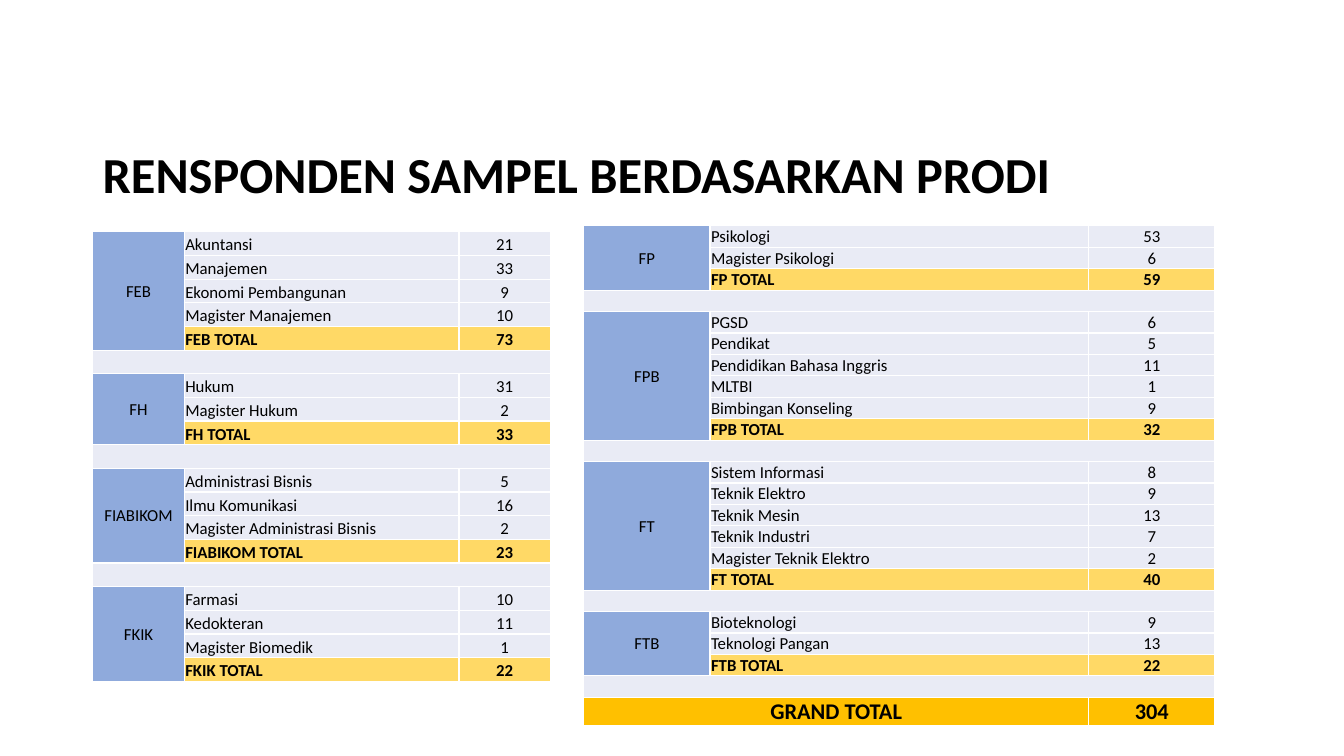
from lxml import etree
from pptx import Presentation, util as u
from pptx.dml.color import RGBColor
from pptx.enum import text
from pptx.oxml import ns

COLORS = {"faculty": "8FAADC", "program": "E9EBF5", "total": "FFD966",
          "grand": "FFC000", "ink": "000000", "border": "FFFFFF"}
MIDDLE, BOTTOM = text.MSO_ANCHOR.MIDDLE, text.MSO_ANCHOR.BOTTOM
LEFT, CENTER = text.PP_ALIGN.LEFT, text.PP_ALIGN.CENTER

LEFT_FACULTIES = [
    ("FEB", [("Akuntansi", 21), ("Manajemen", 33), ("Ekonomi Pembangunan", 9),
             ("Magister Manajemen", 10)], 73),
    ("FH", [("Hukum", 31), ("Magister Hukum", 2)], 33),
    ("FIABIKOM", [("Administrasi Bisnis", 5), ("Ilmu Komunikasi", 16),
                  ("Magister Administrasi Bisnis", 2)], 23),
    ("FKIK", [("Farmasi", 10), ("Kedokteran", 11), ("Magister Biomedik", 1)], 22),
]
RIGHT_FACULTIES = [
    ("FP", [("Psikologi", 53), ("Magister Psikologi", 6)], 59),
    ("FPB", [("PGSD", 6), ("Pendikat", 5), ("Pendidikan Bahasa Inggris", 11),
             ("MLTBI", 1), ("Bimbingan Konseling", 9)], 32),
    ("FT", [("Sistem Informasi", 8), ("Teknik Elektro", 9), ("Teknik Mesin", 13),
            ("Teknik Industri", 7), ("Magister Teknik Elektro", 2)], 40),
    ("FTB", [("Bioteknologi", 9), ("Teknologi Pangan", 13)], 22),
]


def apply(target, formats):
    """Set each named format value on the target."""
    for name, value in formats.items():
        setattr(target, name, value)


def write(paragraph, words, size, bold):
    """Add one run of Calibri in the ink colour."""
    run = paragraph.add_run()
    run.text = words
    apply(run.font, {"name": "Calibri", "size": u.Pt(size), "bold": bold})
    run.font.color.rgb = RGBColor.from_string(COLORS["ink"])


def prepare_cell(cell):
    """Give a cell thin insets, white borders, the program fill and a small empty line."""
    apply(cell, {"margin_left": u.Inches(0.01), "margin_right": u.Inches(0.01),
                 "margin_top": u.Inches(0.01), "margin_bottom": 0})
    properties = cell._tc.get_or_add_tcPr()
    for side in ("lnL", "lnR", "lnT", "lnB"):
        line = etree.SubElement(properties, ns.qn(f"a:{side}"), w=str(u.Pt(1)))
        fill = etree.SubElement(line, ns.qn("a:solidFill"))
        etree.SubElement(fill, ns.qn("a:srgbClr"), val=COLORS["border"])
    paint(cell, "program")
    paragraph = cell.text_frame.paragraphs[0]
    etree.SubElement(paragraph._p, ns.qn("a:endParaRPr"), sz="1200")


def paint(cell, role):
    """Fill a cell with the colour of its role."""
    cell.fill.solid()
    cell.fill.fore_color.rgb = RGBColor.from_string(COLORS[role])


def fill_cell(cell, words, role, align=CENTER, anchor=BOTTOM, size=12, bold=False):
    """Colour a cell and write its words."""
    paint(cell, role)
    cell.vertical_anchor = anchor
    paragraph = cell.text_frame.paragraphs[0]
    paragraph.alignment = align
    write(paragraph, words, size, bold)


def add_title(slide, box, words):
    """Place the bold slide title in its box."""
    frame = slide.shapes.add_textbox(*map(u.Inches, box)).text_frame
    apply(frame, {"word_wrap": True, "vertical_anchor": MIDDLE})
    frame.paragraphs[0].line_spacing = 0.9
    write(frame.paragraphs[0], words, 36, True)


def add_faculties(slide, box, faculties, columns, grand=None):
    """Fill the box with faculty blocks, a gap row between them and an optional grand total."""
    grand_height = 0.27 if grand else 0
    row_count = sum(len(programs) + 2 for _, programs, _ in faculties) - 1
    row_count += 2 if grand else 0
    table = slide.shapes.add_table(row_count, 3, *map(u.Inches, box)).table
    apply(table, {"first_row": False, "horz_banding": False})
    for column, share in zip(table.columns, columns):
        column.width = u.Inches(box[2] * share)
    regular_rows = row_count - bool(grand)
    for row in table.rows:
        row.height = u.Inches((box[3] - grand_height) / regular_rows)
    for cell in table.iter_cells():
        prepare_cell(cell)

    top = 0
    for faculty, programs, total in faculties:
        last = top + len(programs)
        table.cell(top, 0).merge(table.cell(last, 0))
        fill_cell(table.cell(top, 0), faculty, "faculty", anchor=MIDDLE)
        entries = programs + [(f"{faculty} TOTAL", total)]
        for row, (label, count) in enumerate(entries, top):
            is_total = row == last
            role = "total" if is_total else "program"
            fill_cell(table.cell(row, 1), label, role, align=LEFT, bold=is_total)
            fill_cell(table.cell(row, 2), str(count), role, bold=is_total)
        top = last + 2
        if top <= row_count:
            table.cell(top - 1, 0).merge(table.cell(top - 1, 2))

    if grand:
        table.rows[top].height = u.Inches(grand_height)
        table.cell(top, 0).merge(table.cell(top, 1))
        fill_cell(table.cell(top, 0), "GRAND TOTAL", "grand", size=16, bold=True)
        fill_cell(table.cell(top, 2), str(grand), "grand", size=16, bold=True)


def main():
    """Build the respondents slide."""
    deck = Presentation()
    apply(deck, {"slide_width": u.Inches(13.33), "slide_height": u.Inches(7.5)})
    slide = deck.slides.add_slide(deck.slide_layouts[6])
    columns = (0.2, 0.6, 0.2)
    add_title(slide, (0.92, 1.28, 11.5, 0.95), "RENSPONDEN SAMPEL BERDASARKAN PRODI")
    add_faculties(slide, (0.92, 2.3, 4.54, 4.46), LEFT_FACULTIES, columns)
    add_faculties(slide, (5.79, 2.24, 6.26, 4.95), RIGHT_FACULTIES, columns, grand=304)
    deck.save("out.pptx")


if __name__ == "__main__":
    main()
